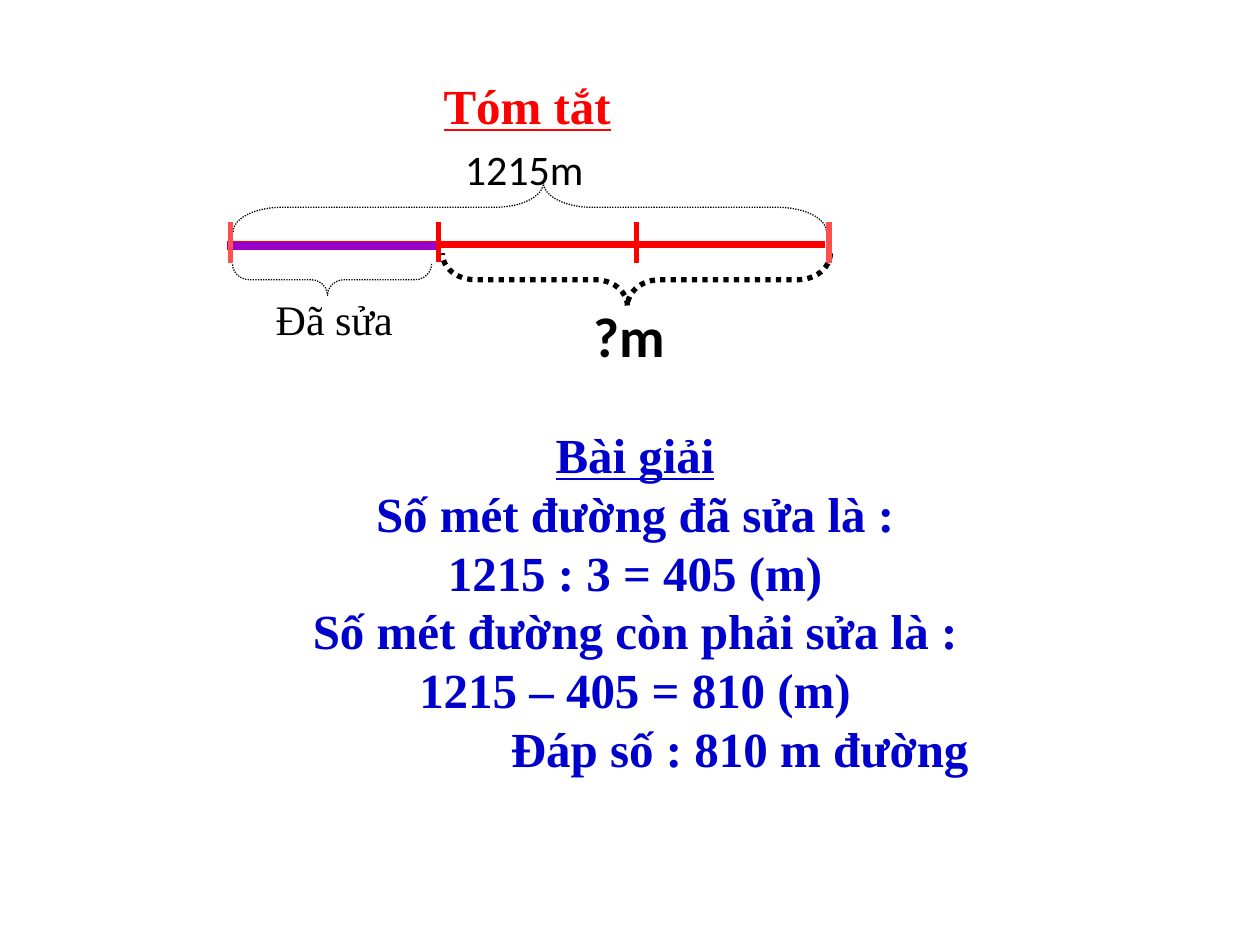
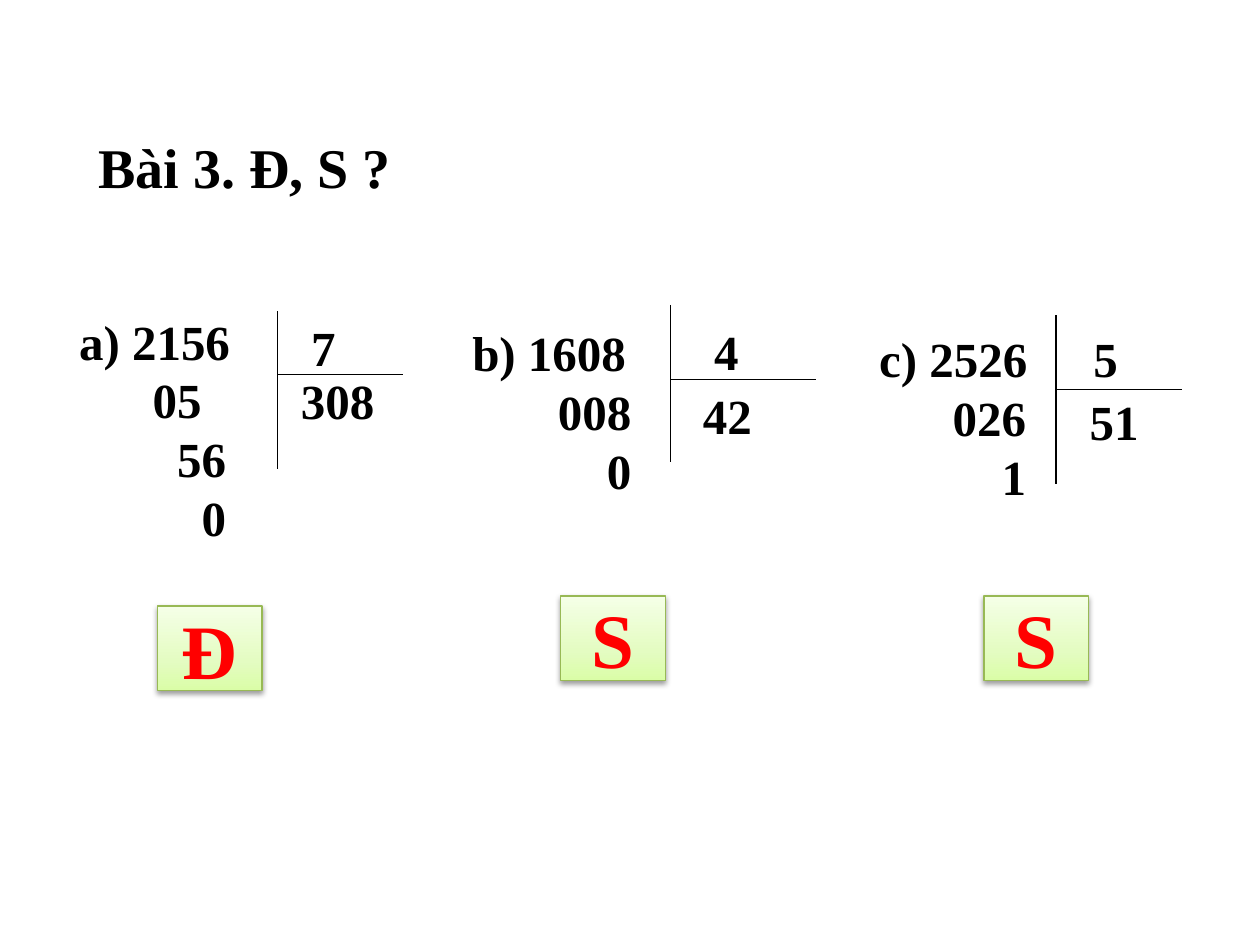
from copy import deepcopy

from pptx import Presentation
from pptx.dml.color import RGBColor
from pptx.enum.dml import MSO_LINE
from pptx.enum.shapes import MSO_CONNECTOR, MSO_SHAPE
from pptx.enum.text import MSO_ANCHOR, PP_ALIGN
from pptx.oxml import parse_xml
from pptx.oxml.ns import qn
from pptx.util import Inches, Pt

BLACK = RGBColor(0x00, 0x00, 0x00)
RED = RGBColor(0xFF, 0x00, 0x00)
LIGHT_RED = RGBColor(0xFF, 0x50, 0x50)
BLUE = RGBColor(0x00, 0x00, 0xCC)
PURPLE = RGBColor(0x99, 0x00, 0xCC)
GREEN_LINE = RGBColor(0x98, 0xB9, 0x55)
GREEN_STOPS = [(0, RGBColor(0xDA, 0xFD, 0xA7)),
               (0.35, RGBColor(0xE4, 0xFC, 0xC2)),
               (1, RGBColor(0xF5, 0xFF, 0xE7))]
SERIF = "Times New Roman"
SANS = "Calibri"
DIGIT_SPACE = 0.0972  # width of one space at 28 pt
A_NS = "http://schemas.openxmlformats.org/drawingml/2006/main"
SHADOW = (f'<a:effectLst xmlns:a="{A_NS}">'
          '<a:outerShdw blurRad="40000" dist="20000" dir="5400000" rotWithShape="0">'
          '<a:srgbClr val="000000"><a:alpha val="38000"/></a:srgbClr>'
          '</a:outerShdw></a:effectLst>')


def write(sp, at, lines, size=28, color=BLACK, font=SERIF, bold=True,
          underlined=False, align=PP_ALIGN.LEFT, anchor=MSO_ANCHOR.TOP, wrap=True):
    """Place a shape and fill it with lines, each a (text, left indent in inches) pair.

    With underlined set, only the first line is underlined.
    """
    sp.left, sp.top, sp.width, sp.height = [Inches(v) for v in at]
    tf = sp.text_frame
    tf.word_wrap = wrap
    tf.vertical_anchor = anchor
    for i, (text, indent) in enumerate(lines):
        p = tf.paragraphs[0] if i == 0 else tf.add_paragraph()
        p.alignment = align
        if indent:
            p._p.get_or_add_pPr().set("marL", str(Inches(indent)))
        r = p.add_run()
        r.text = text
        r.font.size = Pt(size)
        r.font.name = font
        r.font.bold = bold
        r.font.underline = underlined and i == 0
        r.font.color.rgb = color


def add_line(s, x1, y1, x2, y2, color=BLACK, width=0.75):
    line = s.shapes.add_connector(MSO_CONNECTOR.STRAIGHT, Inches(x1), Inches(y1),
                                  Inches(x2), Inches(y2))
    line.line.color.rgb = color
    line.line.width = Pt(width)
    line._element.spPr.append(parse_xml(f'<a:effectLst xmlns:a="{A_NS}"/>'))


prs = Presentation()
prs.slide_width, prs.slide_height = Inches(10), Inches(7.5)
title_only = prs.slide_layouts[5]

# Slide 1: road problem, diagram and solution
s = prs.slides.add_slide(title_only)
write(s.shapes.title, (3.42, 0.55, 1.58, 0.57), [("Tóm tắt", 0)],
      color=RED, underlined=True)

solution = [("Bài giải", 0),
            ("Số mét đường đã sửa là :", 0),
            ("1215 : 3 = 405 (m)", 0),
            ("Số mét đường còn phải sửa là :", 0),
            ("1215 – 405 = 810 (m)", 0),
            ("Đáp số : 810 m đường", 1.66)]
write(s.shapes.add_textbox(0, 0, 0, 0), (2, 3.32, 6.08, 2.93), solution,
      color=BLUE, underlined=True, align=PP_ALIGN.CENTER)

braces = [((4.01, -0.71, 0.39, 4.71), 270, 0.996, 0.75),
          ((2.51, 1.43, 0.25, 1.58), 90, 0.528, 0.75),
          ((4.84, 0.68, 0.42, 3.08), 90, 0.617, 3)]
for at, rotation, curve, width in braces:
    brace = s.shapes.add_shape(MSO_SHAPE.RIGHT_BRACE, *[Inches(v) for v in at])
    brace.rotation = rotation
    brace.adjustments[0] = curve
    brace.adjustments[1] = 0.523
    brace.shadow.inherit = False
    brace.fill.background()
    brace.line.color.rgb = BLACK
    brace.line.width = Pt(width)
    brace.line.dash_style = MSO_LINE.ROUND_DOT

diagram_labels = [("Đã sửa", (2.09, 2.28, 1.14, 0.51), 24, SERIF, False),
                  ("1215m", (3.59, 1.09, 1.58, 0.5), 24, SANS, False),
                  ("?m", (4.61, 2.34, 1.15, 0.64), 32, SANS, True)]
for text, at, size, font, bold in diagram_labels:
    write(s.shapes.add_textbox(0, 0, 0, 0), at, [(text, 0)], size=size,
          font=font, bold=bold)

add_line(s, 1.84, 1.95, 6.55, 1.95, RED, 3)
add_line(s, 1.8, 1.93, 6.55, 1.93, RED, 3)
add_line(s, 1.8, 1.95, 3.46, 1.95, PURPLE, 4.5)
for x, bottom, color in [(3.48, 2.08, RED), (5.05, 2.09, RED),
                         (1.83, 2.09, LIGHT_RED), (6.58, 2.09, LIGHT_RED)]:
    add_line(s, x, 1.76, x, bottom, color, 3)

# Slide 2: three long divisions, right or wrong
s = prs.slides.add_slide(title_only)
write(s.shapes.title, (0.68, 1, 3.31, 0.64), [("Bài 3. Đ, S ?", 0)], size=32)

# Working lines come with their indent in spaces; bars are (x, top, bottom, y, right end)
divisions = [
    ([("a) 2156", 0), ("05", 6), ("56", 8), ("0", 10)], (0.53, 2.42, 1.83, 1.97),
     (2.2, 2.47, 3.72, 2.97, 3.2),
     ("7", (2.37, 2.47, 0.42, 0.57)), ("308", (2.29, 2.89, 0.83, 0.57)),
     "Đ", (1.25, 4.81)),
    ([("b) 1608", 0), ("008", 7), ("0", 11)], (3.65, 2.51, 1.5, 1.5),
     (5.32, 2.42, 3.67, 3.01, 6.48),
     ("4", (5.57, 2.5, 0.5, 0.57)), ("42", (5.48, 3.01, 0.75, 0.57)),
     "S", (4.45, 4.73)),
    ([("c) 2526", 0), ("026", 6), ("1", 10)], (6.88, 2.56, 1.67, 1.5),
     (8.38, 2.5, 3.84, 3.09, 9.38),
     ("5", (8.58, 2.56, 0.58, 0.57)), ("51", (8.55, 3.06, 0.67, 0.57)),
     "S", (7.81, 4.73)),
]
for working, working_at, bars, divisor, quotient, verdict, verdict_at in divisions:
    write(s.shapes.add_textbox(0, 0, 0, 0), working_at,
          [(text, spaces * DIGIT_SPACE) for text, spaces in working])
    x, top, bottom, y, right = bars
    add_line(s, x, top, x, bottom)
    add_line(s, x, y, right, y)
    for text, at in (divisor, quotient):
        write(s.shapes.add_textbox(0, 0, 0, 0), at, [(text, 0)])

    box = s.shapes.add_shape(MSO_SHAPE.RECTANGLE, 0, 0, 0, 0)
    box.fill.gradient()
    box.fill.gradient_angle = 90
    stop_list = box._element.spPr.find(".//" + qn("a:gsLst"))
    stop_list.insert(1, deepcopy(stop_list[0]))
    for stop, (position, color) in zip(box.fill.gradient_stops, GREEN_STOPS):
        stop.position = position
        stop.color.rgb = color
    box.line.color.rgb = GREEN_LINE
    box.line.width = Pt(0.75)
    box._element.spPr.append(parse_xml(SHADOW))
    write(box, (*verdict_at, 0.83, 0.67), [(verdict, 0)], size=44, color=RED,
          align=PP_ALIGN.CENTER, anchor=MSO_ANCHOR.MIDDLE, wrap=False)

prs.save("out.pptx")
